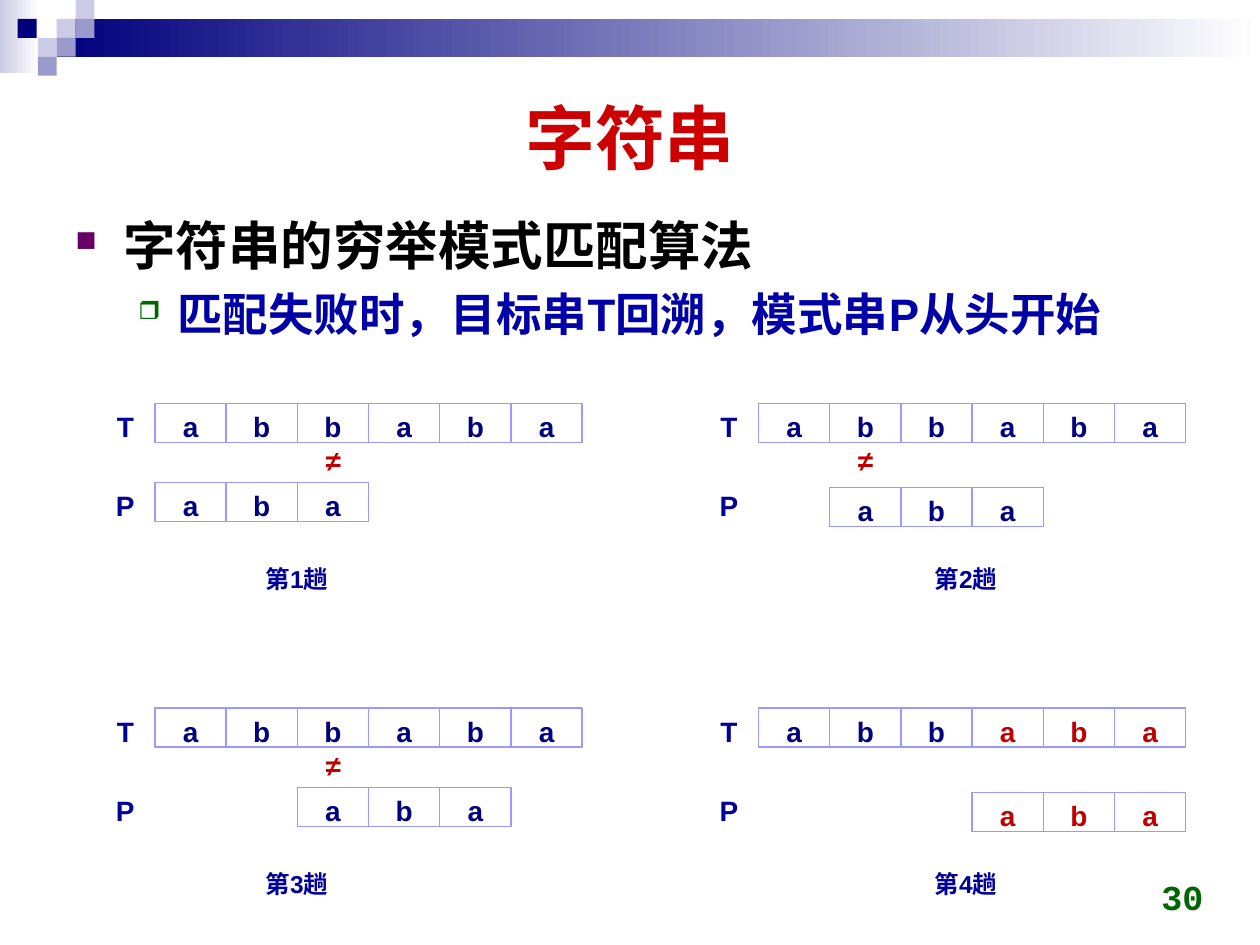
from dataclasses import dataclass

from lxml import etree
from pptx import Presentation
from pptx import util as u
from pptx.dml.color import RGBColor
from pptx.enum import shapes, text
from pptx.oxml import ns


@dataclass(frozen=True)
class Theme:
    font: str = "Arial"
    number_font: str = "Courier New"
    navy: str = "00007D"
    pale: str = "CCCCE6"
    lilac: str = "9999CC"
    white: str = "FFFFFF"
    red: str = "CC0000"
    match: str = "C00000"
    black: str = "000000"
    blue: str = "0000A8"
    label: str = "000099"
    border: str = "9999FF"
    purple: str = "660066"
    green: str = "006600"
    title_size: int = 40
    heading_size: int = 30
    detail_size: int = 26
    number_size: int = 20
    cell_size: int = 16
    caption_size: int = 14


@dataclass(frozen=True)
class MatchPass:
    number: int
    left: float
    top: float
    caption_left: float
    shift: int
    pattern_drop: float
    mismatch: int | None = None


THEME = Theme()
TARGET = "abbaba"
PATTERN = "aba"
CELL_WIDTH = 3.39 / len(TARGET)
CELL_HEIGHT = 0.31
SQUARE = 0.15
CENTER = text.PP_ALIGN.CENTER
PASSES = (
    MatchPass(1, 1.23, 3.2, 2.01, 0, 0.63, 2),
    MatchPass(2, 6.02, 3.2, 7.32, 1, 0.67, 1),
    MatchPass(3, 1.23, 5.62, 2.01, 2, 0.63, 2),
    MatchPass(4, 6.02, 5.62, 7.32, 3, 0.67),
)


def apply_format(target, values):
    for name, value in values.items():
        setattr(target, name, value)


def write(paragraph, content, size, color, font=THEME.font, align=None):
    run = paragraph.add_run()
    run.text = content
    apply_format(run.font, {"name": font, "size": u.Pt(size), "bold": True})
    run.font.color.rgb = RGBColor.from_string(color)
    paragraph.alignment = align


def add_text(slide, box, content, size, color, font=THEME.font, align=None,
             wrap=True, anchor=text.MSO_ANCHOR.TOP):
    shape = slide.shapes.add_textbox(*map(u.Inches, box))
    apply_format(shape.text_frame, {"word_wrap": wrap, "vertical_anchor": anchor})
    write(shape.text_frame.paragraphs[0], content, size, color, font, align)


def add_rectangle(slide, box, *colors):
    shape = slide.shapes.add_shape(
        shapes.MSO_SHAPE.RECTANGLE, *map(u.Inches, box))
    shape.shadow.inherit = False
    shape.line.fill.background()
    if len(colors) == 1:
        shape.fill.solid()
        shape.fill.fore_color.rgb = RGBColor.from_string(colors[0])
    elif colors:
        shape.fill.gradient()
        shape.fill.gradient_angle = 0
        for position, (stop, color) in enumerate(
                zip(shape.fill.gradient_stops, colors)):
            stop.position = position
            stop.color.rgb = RGBColor.from_string(color)
    else:
        shape.fill.background()
    return shape


def add_cells(slide, left, top, letters, colors):
    for index, (letter, color) in enumerate(zip(letters, colors)):
        cell = add_rectangle(
            slide, (left + index * CELL_WIDTH, top, CELL_WIDTH, CELL_HEIGHT))
        cell.line.color.rgb = RGBColor.from_string(THEME.border)
        cell.line.width = u.Pt(0.75)
        apply_format(cell.text_frame, {
            "word_wrap": False, "vertical_anchor": text.MSO_ANCHOR.TOP})
        write(cell.text_frame.paragraphs[0], letter, THEME.cell_size, color,
              align=CENTER)


def add_pass(slide, match):
    found = match.mismatch is None
    matched = range(match.shift, match.shift + len(PATTERN)) if found else ()
    colors = [THEME.match if index in matched else THEME.navy
              for index in range(len(TARGET))]
    pattern_left = match.left + match.shift * CELL_WIDTH
    add_cells(slide, match.left, match.top, TARGET, colors)
    add_cells(slide, pattern_left, match.top + match.pattern_drop, PATTERN,
              colors[match.shift:])

    marks = [("T", match.left - 0.42, 0, THEME.label),
             ("P", match.left - 0.42, 0.63, THEME.label)]
    if not found:
        marks.append(("≠", match.left + match.mismatch * CELL_WIDTH + 0.1,
                      0.27, THEME.match))
    for mark, left, drop, color in marks:
        add_text(slide, (left, match.top + drop, 0.37, 0.39), mark,
                 THEME.cell_size, color, align=CENTER, wrap=False)
    add_text(slide, (match.caption_left, match.top + 1.23, 0.7, 0.34),
             f"第{match.number}趟", THEME.caption_size, THEME.label)


def add_bullet(paragraph, symbol, color, margin, hanging):
    properties = paragraph._p.get_or_add_pPr()
    properties.set("marL", str(u.Inches(margin)))
    properties.set("indent", str(-u.Inches(hanging)))
    bullet_color = etree.SubElement(properties, ns.qn("a:buClr"))
    etree.SubElement(bullet_color, ns.qn("a:srgbClr"), val=color)
    etree.SubElement(properties, ns.qn("a:buSzPct"), val="55000")
    etree.SubElement(properties, ns.qn("a:buChar"), char=symbol)


def add_outline(slide):
    items = (
        ("字符串的穷举模式匹配算法", THEME.heading_size, THEME.black,
         "■", THEME.purple, 0.38, 0.38),
        ("匹配失败时，目标串T回溯，模式串P从头开始", THEME.detail_size,
         THEME.blue, "❒", THEME.green, 0.81, 0.31),
    )
    frame = slide.shapes.add_textbox(
        *map(u.Inches, (0.5, 1.62, 9, 5.2))).text_frame
    frame.word_wrap = True
    for level, (content, size, color, *bullet) in enumerate(items):
        paragraph = frame.add_paragraph() if level else frame.paragraphs[0]
        write(paragraph, content, size, color)
        apply_format(paragraph, {
            "level": level, "line_spacing": 1.05,
            "space_before": u.Pt(size * 0.15)})
        add_bullet(paragraph, *bullet)


def add_banner(slide):
    add_rectangle(slide, (0, 0, 0.31, 0.58), THEME.pale, THEME.white)
    add_rectangle(slide, (0.45, 0.15, 9.55, 0.3), THEME.navy, THEME.white)
    squares = ((3, 1, THEME.pale), (4, 0, THEME.pale), (4, 1, THEME.lilac),
               (2, 2, THEME.pale), (3, 2, THEME.lilac), (2, 3, THEME.lilac))
    for column, row, color in squares:
        add_rectangle(slide, (column * SQUARE, row * SQUARE, SQUARE, SQUARE),
                      color)
    add_rectangle(slide, (0.14, SQUARE, SQUARE, SQUARE), THEME.navy)


def main():
    presentation = Presentation()
    apply_format(presentation, {
        "slide_width": u.Inches(10), "slide_height": u.Inches(7.5)})
    slide = presentation.slides.add_slide(presentation.slide_layouts[6])
    add_banner(slide)
    add_text(slide, (0.5, 0.5, 9, 1.16), "字符串", THEME.title_size, THEME.red,
             align=CENTER, anchor=text.MSO_ANCHOR.MIDDLE)
    add_outline(slide)
    add_text(slide, (7.32, 6.83, 2.33, 0.5), "30", THEME.number_size,
             THEME.green, THEME.number_font, text.PP_ALIGN.RIGHT,
             anchor=text.MSO_ANCHOR.BOTTOM)
    for match in PASSES:
        add_pass(slide, match)
    presentation.save("out.pptx")


if __name__ == "__main__":
    main()
